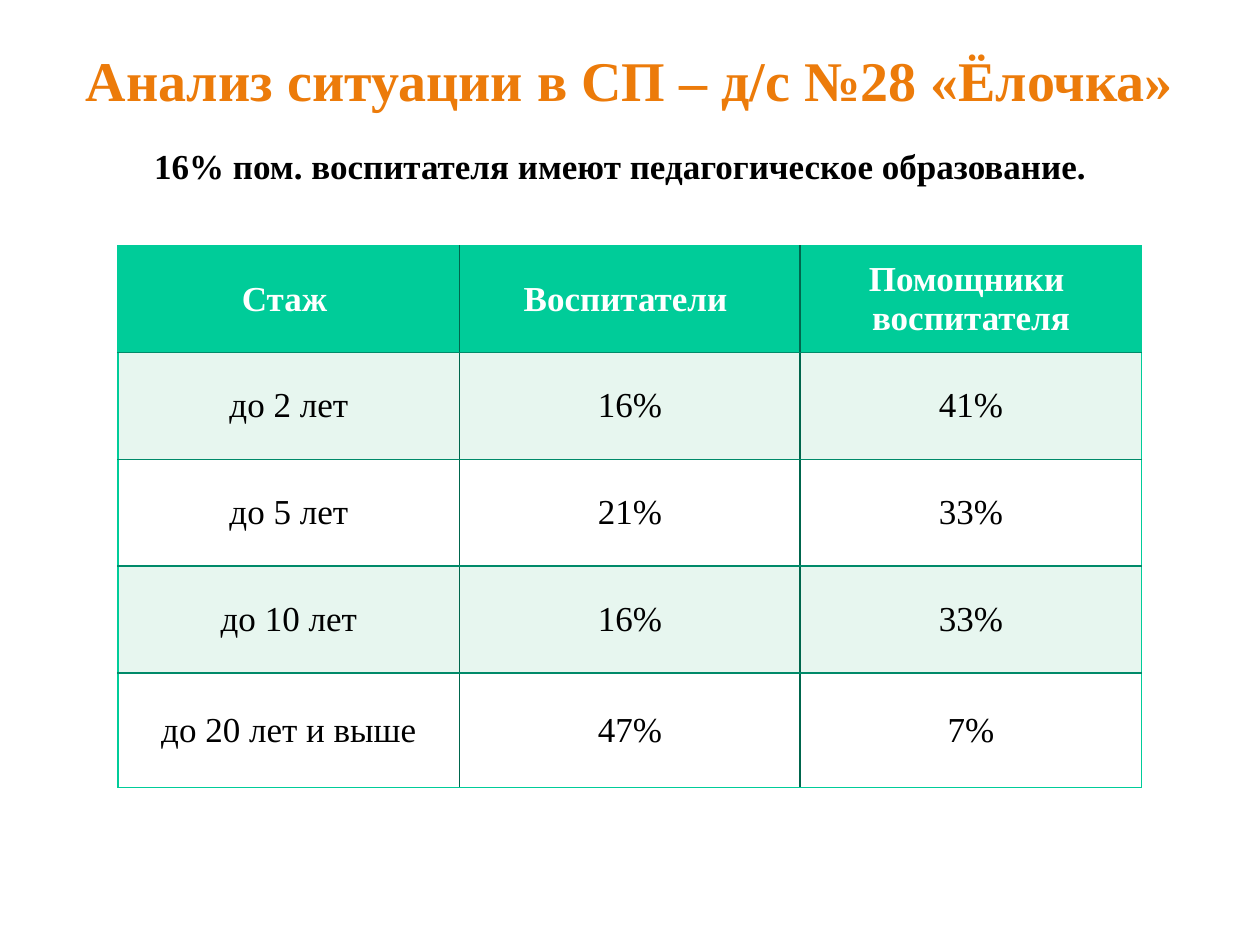
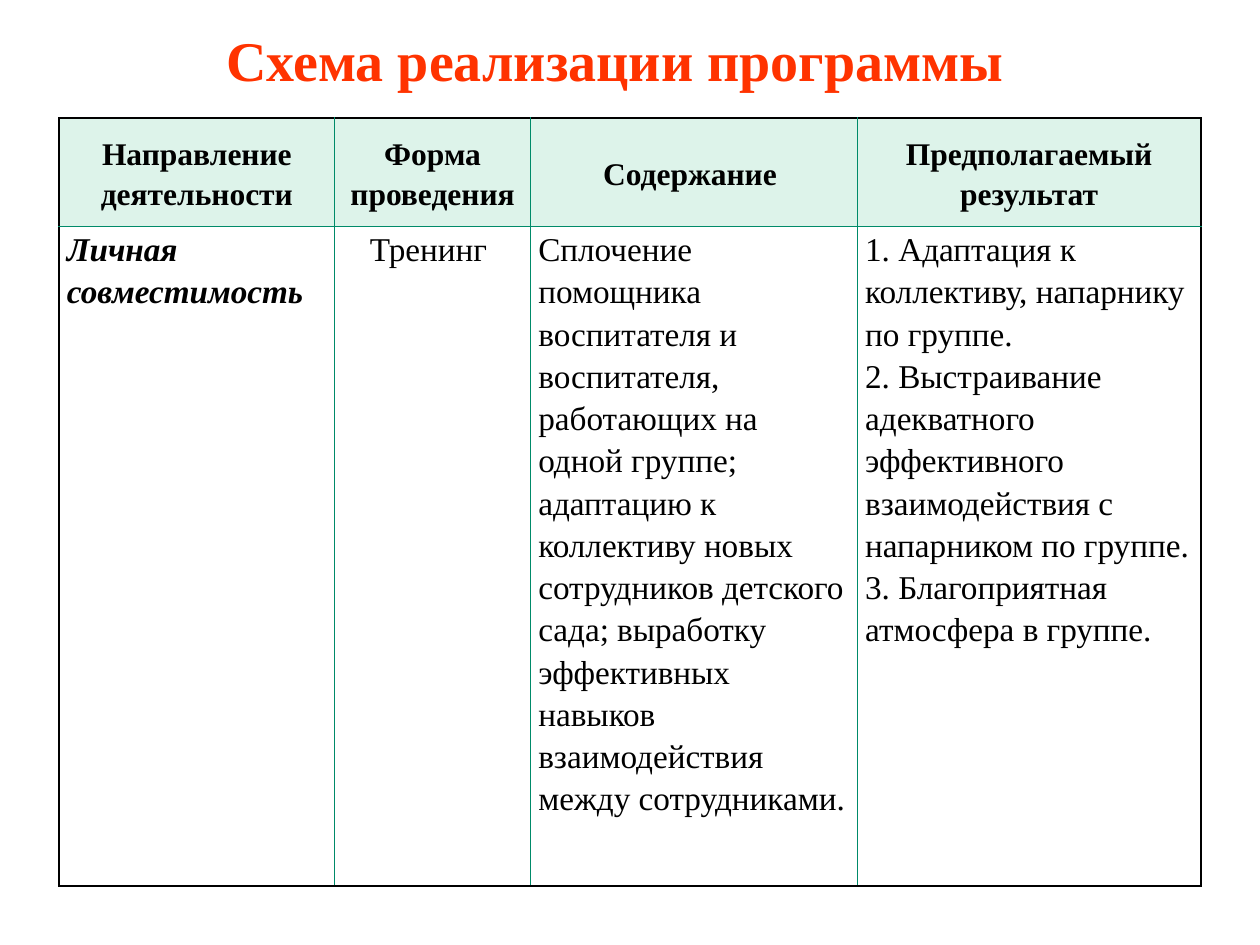
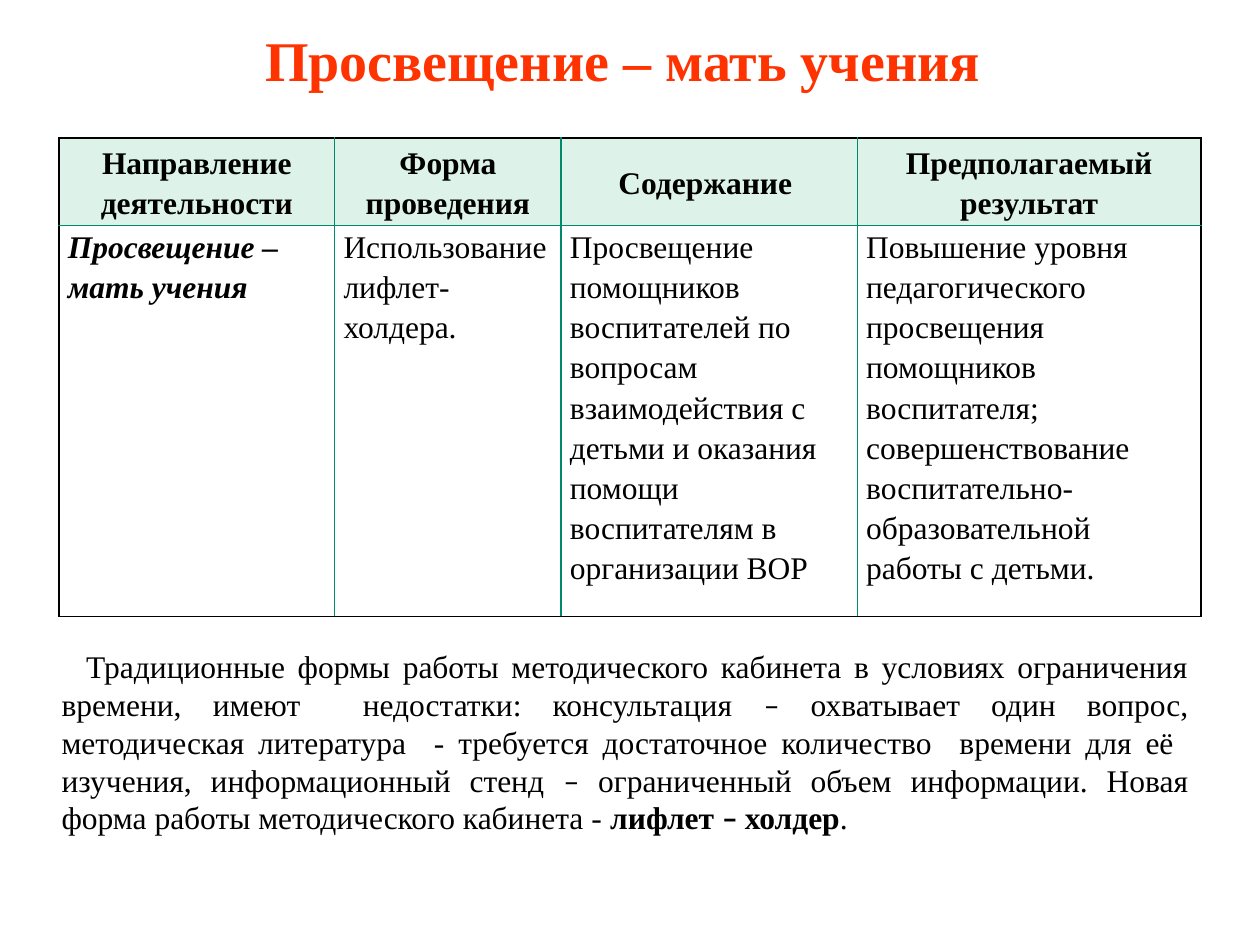
from dataclasses import dataclass
from typing import NamedTuple, Optional

from lxml import etree
from pptx import Presentation
from pptx import util as u
from pptx.dml.color import RGBColor
from pptx.enum import text
from pptx.oxml.ns import qn

PX_PER_INCH = 128
CENTER = text.PP_ALIGN.CENTER
LEFT = text.PP_ALIGN.LEFT
JUSTIFY = text.PP_ALIGN.JUSTIFY
MIDDLE = text.MSO_ANCHOR.MIDDLE
TOP = text.MSO_ANCHOR.TOP


@dataclass(frozen=True)
class Theme:
    font: str = "Times New Roman"
    dash_font: str = "Calibri"
    black: str = "000000"
    white: str = "FFFFFF"
    orange: str = "EC7B0A"
    red: str = "FF3300"
    green: str = "00CC99"
    dark_green: str = "00664D"
    line_green: str = "008A69"
    mint: str = "E7F6EF"
    header_mint: str = "DDF3EA"
    title_size: int = 32
    large_size: int = 20
    scheme_size: int = 19
    body_size: int = 18
    border_width: int = 1


THEME = Theme()


class Box(NamedTuple):
    left: int
    top: int
    width: int
    height: int


@dataclass(frozen=True)
class RunStyle:
    size: int
    color: str = THEME.black
    bold: bool = False
    italic: bool = False
    font: str = THEME.font


class Run(NamedTuple):
    words: str
    style: RunStyle


@dataclass(frozen=True)
class CellStyle:
    run: RunStyle
    align: text.PP_ALIGN = CENTER
    anchor: text.MSO_ANCHOR = MIDDLE
    fill: Optional[str] = None
    side_margin: int = 13
    end_margin: int = 6
    line_spacing: Optional[float] = None


class Borders(NamedTuple):
    outer: str
    vertical: str
    horizontal: str


class Cell(NamedTuple):
    paragraphs: list[str]
    style: CellStyle


@dataclass(frozen=True)
class Grid:
    left: int
    top: int
    columns: list[int]
    rows: list[int]
    borders: Borders
    cells: list[list[Cell]]


def px(length: int) -> u.Emu:
    return u.Inches(length / PX_PER_INCH)


def add_run(paragraph, run: Run) -> None:
    piece = paragraph.add_run()
    piece.text = run.words
    font = piece.font
    font.name = run.style.font
    font.size = u.Pt(run.style.size)
    font.bold = run.style.bold
    font.italic = run.style.italic
    font.color.rgb = RGBColor.from_string(run.style.color)


def add_text(slide, box: Box, runs: list[Run], align=CENTER, anchor=TOP, indent: int = 0) -> None:
    frame = slide.shapes.add_textbox(*map(px, box)).text_frame
    frame.word_wrap = True
    frame.auto_size = text.MSO_AUTO_SIZE.SHAPE_TO_FIT_TEXT
    frame.vertical_anchor = anchor
    paragraph = frame.paragraphs[0]
    paragraph.alignment = align
    if indent:
        properties = paragraph._p.get_or_add_pPr()
        properties.set("marL", "0")
        properties.set("indent", str(px(indent)))
    for run in runs:
        add_run(paragraph, run)


def add_title(slide, box: Box, words: str, color: str) -> None:
    add_text(slide, box, [Run(words, RunStyle(THEME.title_size, color, bold=True))])


def draw_borders(cell, colors: dict[str, str]) -> None:
    properties = cell._tc.get_or_add_tcPr()
    for side, color in colors.items():
        line = etree.SubElement(properties, qn(f"a:ln{side}"), w=str(u.Pt(THEME.border_width)))
        solid = etree.SubElement(line, qn("a:solidFill"))
        etree.SubElement(solid, qn("a:srgbClr"), val=color)


def fill_cell(cell, content: Cell) -> None:
    style = content.style
    if style.fill:
        cell.fill.solid()
        cell.fill.fore_color.rgb = RGBColor.from_string(style.fill)
    else:
        cell.fill.background()
    cell.vertical_anchor = style.anchor
    cell.margin_left = cell.margin_right = px(style.side_margin)
    cell.margin_top = cell.margin_bottom = px(style.end_margin)
    frame = cell.text_frame
    for index, words in enumerate(content.paragraphs):
        paragraph = frame.add_paragraph() if index else frame.paragraphs[0]
        paragraph.alignment = style.align
        if style.line_spacing:
            paragraph.line_spacing = style.line_spacing
        add_run(paragraph, Run(words, style.run))


def add_grid(slide, grid: Grid) -> None:
    row_count, column_count = len(grid.rows), len(grid.columns)
    box = Box(grid.left, grid.top, sum(grid.columns), sum(grid.rows))
    table = slide.shapes.add_table(row_count, column_count, *map(px, box)).table
    table.first_row = table.horz_banding = False
    for column, width in zip(table.columns, grid.columns):
        column.width = px(width)
    for row, height in zip(table.rows, grid.rows):
        row.height = px(height)
    outer, vertical, horizontal = grid.borders
    for row, contents in enumerate(grid.cells):
        for column, content in enumerate(contents):
            cell = table.cell(row, column)
            draw_borders(cell, {
                "L": vertical if column else outer,
                "R": vertical if column < column_count - 1 else outer,
                "T": horizontal if row else outer,
                "B": horizontal if row < row_count - 1 else outer,
            })
            fill_cell(cell, content)


def add_scheme(slide, top: int, columns: list[int], rows: list[int],
               size: int, side_margin: int, form_align, contents: list[list[str]]) -> None:
    header = CellStyle(RunStyle(THEME.body_size, bold=True), fill=THEME.header_mint,
                       side_margin=8, end_margin=0, line_spacing=1.15)
    headings = ["Направление деятельности", "Форма проведения", "Содержание ",
                "Предполагаемый результат"]

    def body(index: int) -> CellStyle:
        first = index == 0
        return CellStyle(RunStyle(size, bold=first, italic=first),
                         align=form_align if index == 1 else LEFT, anchor=TOP,
                         side_margin=side_margin, end_margin=0, line_spacing=1.15)

    add_grid(slide, Grid(
        60, top, columns, rows,
        Borders(THEME.black, THEME.line_green, THEME.line_green),
        [[Cell([heading], header) for heading in headings],
         [Cell(paragraphs, body(index)) for index, paragraphs in enumerate(contents)]],
    ))


def build_experience_slide(slide) -> None:
    add_title(slide, Box(0, 40, 1280, 82), "Анализ ситуации в СП – д/с №28 «Ёлочка»", THEME.orange)
    add_text(slide, Box(70, 140, 1120, 56),
             [Run("16% пом. воспитателя имеют педагогическое образование.",
                  RunStyle(THEME.large_size, bold=True))])
    header = CellStyle(RunStyle(THEME.large_size, THEME.white, bold=True), fill=THEME.green)
    bands = [CellStyle(RunStyle(THEME.large_size), fill=color)
             for color in (THEME.mint, THEME.white)]
    experience = [
        ("до 2 лет", "16%", "41%"),
        ("до 5 лет", "21%", "33%"),
        ("до 10 лет", "16%", "33%"),
        ("до 20 лет и выше", "47%", "7%"),
    ]
    cells = [[Cell([words], header)
              for words in ("Стаж ", "Воспитатели ", "Помощники  воспитателя")]]
    cells += [[Cell([words], bands[index % 2]) for words in row]
              for index, row in enumerate(experience)]
    add_grid(slide, Grid(120, 250, [347, 346, 347], [108, 109] * 2 + [116],
                         Borders(THEME.green, THEME.dark_green, THEME.line_green), cells))


def build_program_slide(slide) -> None:
    add_title(slide, Box(40, 20, 1170, 82), "Схема реализации программы", THEME.red)
    add_scheme(slide, 120, [280, 199, 332, 349], [110, 670], THEME.scheme_size, 8, CENTER, [
        ["Личная совместимость"],
        ["Тренинг "],
        ["Сплочение помощника воспитателя и воспитателя, работающих на одной группе; "
         "адаптацию к коллективу новых сотрудников детского сада; выработку эффективных "
         "навыков взаимодействия между сотрудниками."],
        ["1. Адаптация к коллективу, напарнику по группе.",
         "2. Выстраивание адекватного эффективного взаимодействия с напарником по группе.",
         "3. Благоприятная атмосфера в группе."],
    ])


def build_education_slide(slide) -> None:
    add_scheme(slide, 140, [280, 230, 301, 349], [89, 396], THEME.body_size, 9, LEFT, [
        ["Просвещение – мать учения"],
        ["Использование лифлет-холдера."],
        ["Просвещение помощников воспитателей по вопросам взаимодействия с детьми "
         "и оказания помощи воспитателям в организации ВОР"],
        ["Повышение уровня педагогического просвещения помощников воспитателя;",
         "совершенствование воспитательно-образовательной работы с детьми."],
    ])
    add_title(slide, Box(0, 20, 1280, 82), "Просвещение – мать учения ", THEME.red)
    plain = RunStyle(THEME.body_size)
    strong = RunStyle(THEME.body_size, bold=True)
    dash = RunStyle(THEME.body_size, font=THEME.dash_font)
    strong_dash = RunStyle(THEME.body_size, bold=True, font=THEME.dash_font)
    add_text(slide, Box(50, 650, 1170, 207), [
        Run("Традиционные формы работы методического кабинета в условиях ограничения "
            "времени, имеют  недостатки: консультация ", plain),
        Run("–", dash),
        Run(" охватывает один вопрос, методическая литература  - требуется достаточное "
            "количество  времени для её  изучения, информационный стенд ", plain),
        Run("–", dash),
        Run(" ограниченный объем информации. Новая форма работы методического кабинета - ", plain),
        Run("лифлет ", strong),
        Run("– ", strong_dash),
        Run("холдер", strong),
        Run(".", plain),
    ], align=JUSTIFY, anchor=MIDDLE, indent=25)


def main() -> None:
    presentation = Presentation()
    presentation.slide_width = px(1280)
    presentation.slide_height = px(960)
    for build in (build_experience_slide, build_program_slide, build_education_slide):
        build(presentation.slides.add_slide(presentation.slide_layouts[6]))
    presentation.save("out.pptx")


if __name__ == "__main__":
    main()
